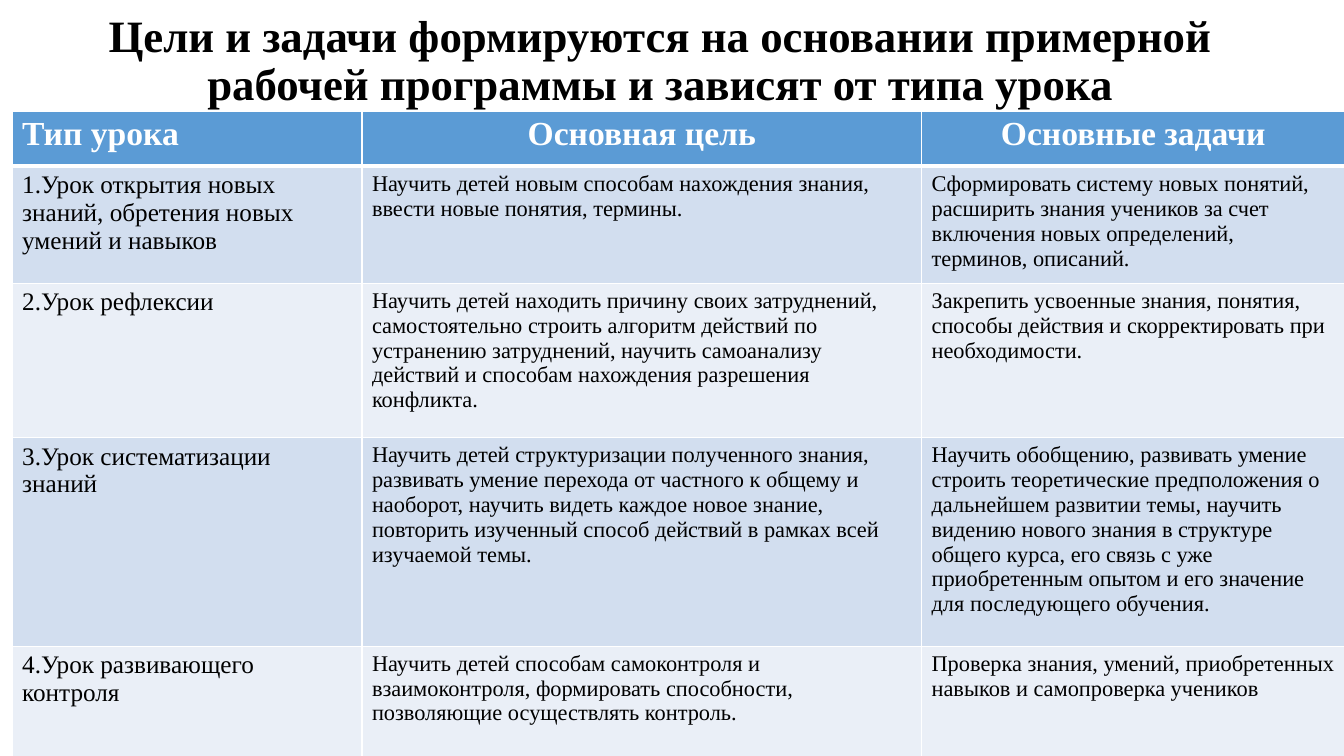
from lxml.etree import SubElement
from pptx import Presentation
from pptx.dml.color import RGBColor
from pptx.enum.text import MSO_ANCHOR as Anchor, MSO_AUTO_SIZE as AutoSize, PP_ALIGN as Align
from pptx.oxml.ns import qn
from pptx.util import Inches, Pt

TITLE = "Цели и задачи формируются на основании примерной рабочей программы и зависят от типа урока"
HEADER = ["Тип урока", "Основная цель", "Основные задачи"]
LESSONS = [
    ["1.Урок открытия новых знаний, обретения новых умений и навыков",
     "Научить детей новым способам нахождения знания, ввести новые понятия, термины.",
     "Сформировать систему новых понятий, расширить знания учеников за счет включения "
     "новых определений, терминов, описаний."],
    ["2.Урок рефлексии",
     "Научить детей находить причину своих затруднений, самостоятельно строить алгоритм "
     "действий по устранению затруднений, научить самоанализу действий и способам "
     "нахождения разрешения конфликта.",
     "Закрепить усвоенные знания, понятия, способы действия и скорректировать при "
     "необходимости."],
    ["3.Урок систематизации знаний",
     "Научить детей структуризации полученного знания, развивать умение перехода от "
     "частного к общему и наоборот, научить видеть каждое новое знание, повторить "
     "изученный способ действий в рамках всей изучаемой темы.",
     "Научить обобщению, развивать умение строить теоретические предположения о "
     "дальнейшем развитии темы, научить видению нового знания в структуре общего курса, "
     "его связь с уже приобретенным опытом и его значение для последующего обучения."],
    ["4.Урок развивающего контроля",
     "Научить детей способам самоконтроля и взаимоконтроля, формировать способности, "
     "позволяющие осуществлять контроль.",
     "Проверка знания, умений, приобретенных навыков и самопроверка учеников"],
]


def rgb(value):
    return RGBColor.from_string(value)


class Deck:
    """Style and current slide; lengths are percentages of the slide's size."""
    FONT = "Times New Roman"
    BLACK, WHITE, BLUE = "000000", "FFFFFF", "5B9BD5"
    BANDS = ["D2DEEF", "EAEFF7"]

    def __init__(self, prs):
        self.prs = prs
        self.slide = prs.slides.add_slide(prs.slide_layouts[5])

    def x(self, share):
        return round(self.prs.slide_width * share / 100)

    def y(self, share):
        return round(self.prs.slide_height * share / 100)

    def text(self, tf, text, size, color, bold=False, align=Align.LEFT, spacing=1.0):
        p = tf.paragraphs[0]
        p.alignment, p.line_spacing = align, spacing
        r = p.add_run()
        r.text = text
        for name, value in {"name": self.FONT, "size": Pt(size), "bold": bold}.items():
            setattr(r.font, name, value)
        r.font.color.rgb = rgb(color)

    def title(self, text, left, top, width, height):
        sp = self.slide.shapes.title
        box = {"left": self.x(left), "top": self.y(top),
               "width": self.x(width), "height": self.y(height)}
        for name, value in box.items():
            setattr(sp, name, value)
        tf = sp.text_frame
        frame = {"word_wrap": True, "auto_size": AutoSize.NONE, "vertical_anchor": Anchor.MIDDLE}
        for name, value in frame.items():
            setattr(tf, name, value)
        self.text(tf, text, 32, self.BLACK, True, Align.CENTER, 0.9)

    def borders(self, cell, **widths):
        tc_pr = cell._tc.get_or_add_tcPr()
        for i, (side, width) in enumerate(widths.items()):
            ln = SubElement(tc_pr, qn(f"a:ln{side}"), w=str(Pt(width)))
            SubElement(SubElement(ln, qn("a:solidFill")), qn("a:srgbClr"), val=self.WHITE)
            tc_pr.insert(i, ln)  # borders precede the fill

    def table(self, rows, left, top, widths, heights):
        tbl = self.slide.shapes.add_table(
            len(rows), len(widths), self.x(left), self.y(top),
            self.x(sum(widths)), self.y(sum(heights))).table
        for column, width in zip(tbl.columns, widths):
            column.width = self.x(width)
        for i, (row, height) in enumerate(zip(rows, heights)):
            tbl.rows[i].height = self.y(height)
            for j, text in enumerate(row):
                self.cell(tbl.cell(i, j), text, i, j)

    def cell(self, cell, text, i, j):
        cell.fill.solid()
        cell.fill.fore_color.rgb = rgb(self.BANDS[(i - 1) % 2] if i else self.BLUE)
        self.borders(cell, L=1, R=1, T=3 if i == 1 else 1, B=1 if i else 3)
        if i == 0:
            self.text(cell.text_frame, text, 24, self.WHITE, True,
                      Align.CENTER if j else Align.LEFT)
        else:
            self.text(cell.text_frame, text, 16 if j else 18, self.BLACK)


def main():
    prs = Presentation()
    prs.slide_width, prs.slide_height = Inches(13.33), Inches(7.5)
    deck = Deck(prs)

    # Heading
    deck.title(TITLE, 1.8, 0, 94.67, 16.4)

    # Lesson types with their goals and tasks
    deck.table([HEADER] + LESSONS, 0.9, 14.67,
               widths=[26.03, 41.64, 31.5],
               heights=[7.33, 15.47, 20.4, 27.6, 14.67])

    prs.save("out.pptx")


if __name__ == "__main__":
    main()
